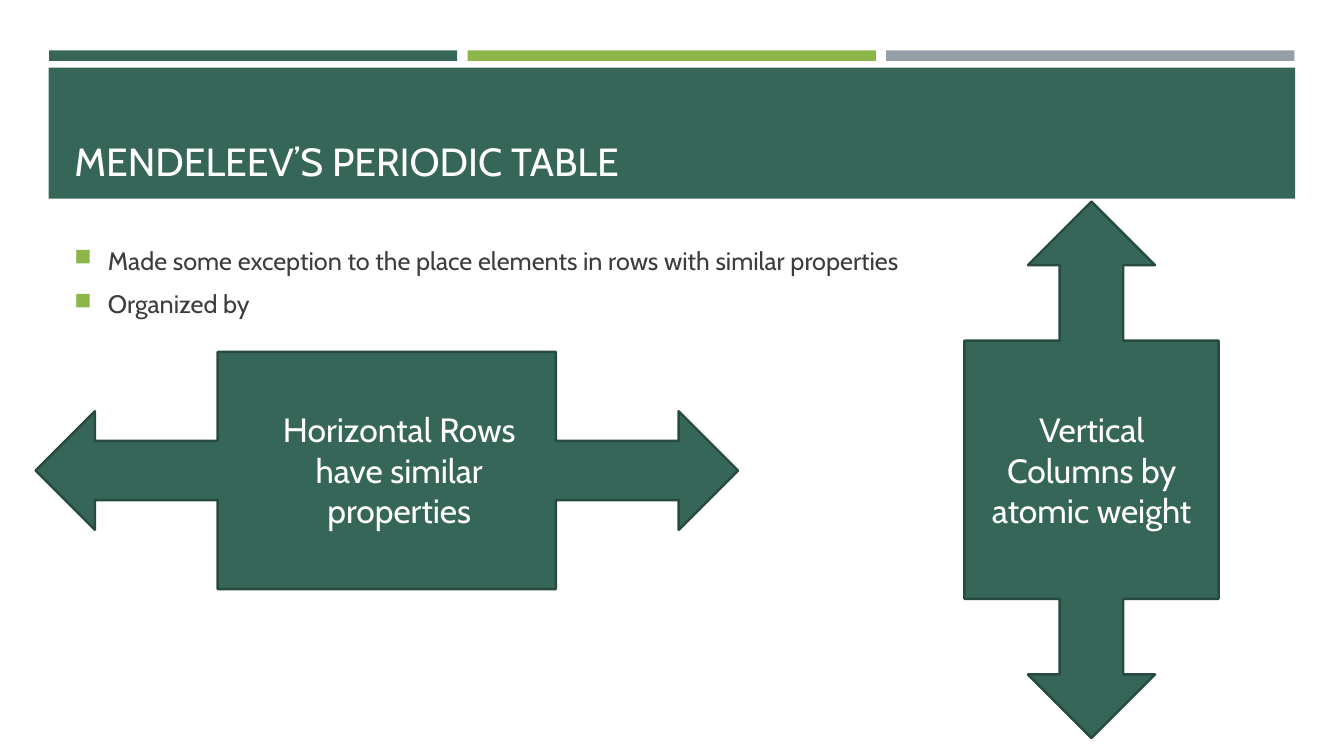
from lxml.etree import SubElement
from pptx import Presentation
from pptx.dml.color import RGBColor
from pptx.enum.shapes import MSO_SHAPE
from pptx.enum.text import MSO_ANCHOR, MSO_AUTO_SIZE, PP_ALIGN
from pptx.oxml.ns import qn
from pptx.util import Pt

HUES = {"green": "366658", "lime": "8CB64A", "gray": "969FA7",
        "edge": "284B41", "white": "FFFFFF", "ink": "3D3D3D"}

deck = Presentation()
deck.slide_width, deck.slide_height = Pt(960), Pt(540)
slide = deck.slides.add_slide(deck.slide_layouts[5])
shapes = slide.shapes


def add_block(kind, box, hue):
    block = shapes.add_shape(kind, *map(Pt, box))
    block.shadow.inherit = False
    block.fill.solid()
    block.fill.fore_color.rgb = RGBColor.from_string(HUES[hue])
    block.line.fill.background()
    return block


def style(para, size, hue, align):
    para.alignment = align
    para.font.name = "Cabin"
    para.font.size = Pt(size)
    para.font.color.rgb = RGBColor.from_string(HUES[hue])


# Header strips and band
for i, hue in enumerate(["green", "lime", "gray"]):
    add_block(MSO_SHAPE.RECTANGLE, (35 + 299 * i, 36, 291.6, 7.5), hue)
add_block(MSO_SHAPE.RECTANGLE, (34.8, 48.3, 890.4, 93.6), "green")

# Title, raised above the band
title = shapes.title
title.element.getparent().append(title.element)
title.left, title.top, title.width, title.height = map(Pt, (46, 55.4, 868.4, 80))
frame = title.text_frame
frame.text = "MENDELEEV’S PERIODIC TABLE"
frame.auto_size = MSO_AUTO_SIZE.NONE
frame.vertical_anchor = MSO_ANCHOR.BOTTOM
style(frame.paragraphs[0], 28, "white", PP_ALIGN.LEFT)

# Bullet list
frame = shapes.add_textbox(*map(Pt, (46, 171.4, 868.4, 289.4))).text_frame
frame.word_wrap = True
frame.text = ("Made some exception to the place elements in rows with similar properties\n"
              "Organized by")
for para in frame.paragraphs:
    para.space_before, para.space_after = Pt(3.6), Pt(6)
    props = para._p.get_or_add_pPr()
    props.set("marL", str(Pt(24)))
    props.set("indent", str(Pt(-24)))
    color = SubElement(props, qn("a:buClr"))
    SubElement(color, qn("a:srgbClr"), val=HUES["lime"])
    SubElement(props, qn("a:buSzPct"), val="92000")
    SubElement(props, qn("a:buChar"), char="■")
    style(para, 18, "ink", PP_ALIGN.LEFT)

# Arrow callouts with their labels
for arrow, turn, label, text in [
    ((25.4, 251.4, 501.8, 169.4), 0, (184.4, 288.7, 201.6, 94.4),
     "Horizontal Rows have similar properties"),
    ((588, 244.8, 383.2, 181.6), 90, (693.4, 288.7, 172.8, 94.4),
     "Vertical Columns by atomic weight"),
]:
    block = add_block(MSO_SHAPE.LEFT_RIGHT_ARROW_CALLOUT, arrow, "green")
    block.rotation = turn
    block.line.color.rgb = RGBColor.from_string(HUES["edge"])
    block.line.width = Pt(1.75)
    frame = shapes.add_textbox(*map(Pt, label)).text_frame
    frame.word_wrap = True
    frame.text = text
    style(frame.paragraphs[0], 24, "white", PP_ALIGN.CENTER)

deck.save("out.pptx")
